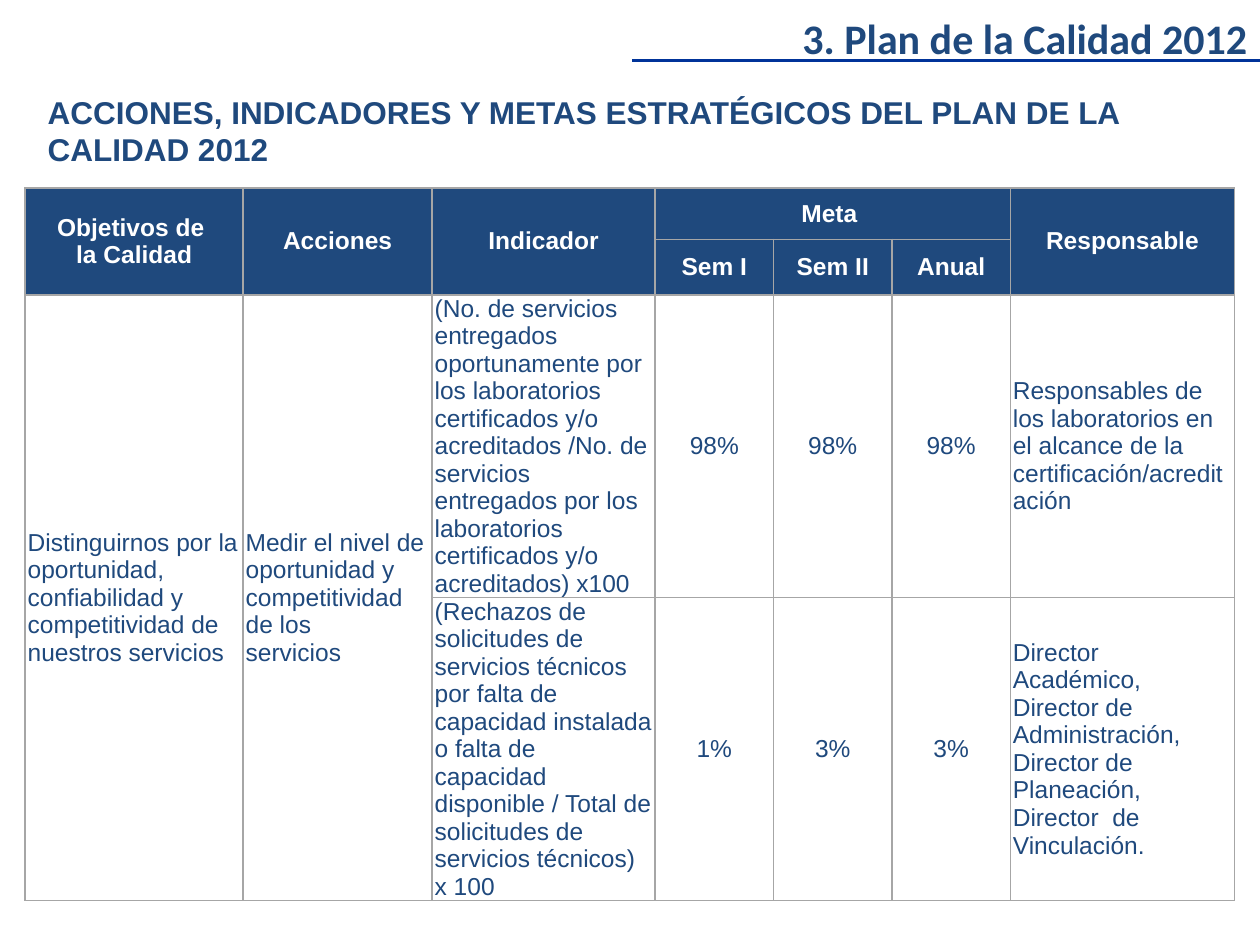
from lxml.etree import SubElement
from pptx import Presentation
from pptx.dml.color import RGBColor
from pptx.enum.shapes import MSO_CONNECTOR
from pptx.enum.text import MSO_ANCHOR, MSO_AUTO_SIZE, PP_ALIGN
from pptx.oxml import parse_xml
from pptx.oxml.ns import nsdecls, qn
from pptx.util import Inches, Pt

NAVY = RGBColor(0x1F, 0x49, 0x7D)
RULE_BLUE = RGBColor(0x00, 0x33, 0x99)
GRAY = RGBColor(0xA6, 0xA6, 0xA6)
WHITE = RGBColor(0xFF, 0xFF, 0xFF)

TITLE = {"name": "Calibri", "size": Pt(24), "bold": True}
HEADING = {"name": "Arial", "size": Pt(18), "bold": True}
HEADER = {"name": "Arial", "size": Pt(14), "bold": True}
BODY = {"name": "Arial", "size": Pt(14), "bold": False}

COL_WIDTHS = (1.73, 1.5, 1.77, 0.94, 0.94, 0.94, 1.78)
ROW_HEIGHTS = (0.41, 0.44, 2.4, 2.4)
HEADER_ROWS = 2
GOAL_COLS = range(3, 6)
MERGES = [((0, c), (1, c)) for c in (0, 1, 2, 6)]
MERGES += [((0, 3), (0, 5)), ((2, 0), (3, 0)), ((2, 1), (3, 1))]

ROWS = (
    ("Objetivos de \nla Calidad", "Acciones", "Indicador", "Meta ", "", "", "Responsable"),
    ("", "", "", "Sem I", "Sem II", "Anual", ""),
    (
        "Distinguirnos por la oportunidad, confiabilidad y competitividad de nuestros servicios",
        "Medir el nivel de\voportunidad y\vcompetitividad de los\vservicios",
        "(No. de servicios entregados oportunamente por los laboratorios certificados y/o "
        "acreditados /No. de servicios entregados por los laboratorios certificados y/o "
        "acreditados) x100",
        "98%", "98%", "98%",
        "Responsables de los laboratorios en el alcance de la certificación/acreditación",
    ),
    (
        "", "",
        "(Rechazos de solicitudes de servicios técnicos por falta de capacidad instalada o "
        "falta de capacidad disponible / Total de solicitudes de servicios técnicos) x 100",
        "1%", "3%", "3%",
        "Director  Académico, Director de Administración, Director de Planeación,\n"
        "Director  de Vinculación.",
    ),
)


def write_text(tf, text, fmt, color, align):
    tf.text = text
    for p in tf.paragraphs:
        p.alignment = align
        for r in p.runs:
            for key, value in fmt.items():
                setattr(r.font, key, value)
            r.font.color.rgb = color


def add_text(slide, box, text, fmt, align, anchor):
    tf = slide.shapes.add_textbox(*map(Inches, box)).text_frame
    tf.word_wrap = True
    tf.auto_size = MSO_AUTO_SIZE.SHAPE_TO_FIT_TEXT
    tf.vertical_anchor = anchor
    write_text(tf, text, fmt, NAVY, align)


def add_rule(slide, start, end):
    line = slide.shapes.add_connector(MSO_CONNECTOR.STRAIGHT, *map(Inches, start + end))
    line.line.color.rgb = RULE_BLUE
    line.line.width = Pt(1.5)
    SubElement(line._element.spPr, qn("a:effectLst"))


def set_borders(cell):
    tc_pr = cell._tc.get_or_add_tcPr()
    for side in ("lnL", "lnR", "lnT", "lnB"):
        tc_pr.append(parse_xml(
            f'<a:{side} {nsdecls("a")} w="{Pt(1)}"><a:solidFill>'
            f'<a:srgbClr val="{GRAY}"/></a:solidFill></a:{side}>'
        ))


def format_cell(cell, text, is_header, centered):
    margins = {"margin_left": 0.02, "margin_right": 0.02, "margin_top": 0, "margin_bottom": 0}
    for key, value in margins.items():
        setattr(cell, key, Inches(value))
    cell.vertical_anchor = MSO_ANCHOR.MIDDLE
    set_borders(cell)
    if is_header:
        cell.fill.solid()
        cell.fill.fore_color.rgb = NAVY
    else:
        cell.fill.background()
    write_text(
        cell.text_frame, text,
        HEADER if is_header else BODY,
        WHITE if is_header else NAVY,
        PP_ALIGN.CENTER if centered else PP_ALIGN.LEFT,
    )


def fill_translucent(cell, percent):
    cell.fill.solid()
    cell.fill.fore_color.rgb = WHITE
    color = cell._tc.tcPr.find(qn("a:solidFill")).find(qn("a:srgbClr"))
    SubElement(color, qn("a:alpha"), val=str(percent * 1000))


def add_plan_table(slide, left, top):
    size = (sum(COL_WIDTHS), sum(ROW_HEIGHTS))
    table = slide.shapes.add_table(
        len(ROWS), len(COL_WIDTHS), *map(Inches, (left, top) + size)
    ).table
    table.first_row = table.horz_banding = False
    for column, width in zip(table.columns, COL_WIDTHS):
        column.width = Inches(width)
    for row, height in zip(table.rows, ROW_HEIGHTS):
        row.height = Inches(height)
    for r, texts in enumerate(ROWS):
        is_header = r < HEADER_ROWS
        for c, text in enumerate(texts):
            format_cell(table.cell(r, c), text, is_header, is_header or c in GOAL_COLS)
    fill_translucent(table.cell(3, 6), 51)
    for first, last in MERGES:
        table.cell(*first).merge(table.cell(*last))


def main():
    prs = Presentation()
    prs.slide_width, prs.slide_height = Inches(10), Inches(7.5)
    slide = prs.slides.add_slide(prs.slide_layouts[6])
    add_rule(slide, (10, 0.48), (5.02, 0.48))
    add_plan_table(slide, 0.2, 1.49)
    add_text(
        slide, (0.28, 0.68, 9.45, 0.71),
        "ACCIONES, INDICADORES Y METAS ESTRATÉGICOS DEL PLAN DE LA CALIDAD 2012",
        HEADING, PP_ALIGN.LEFT, MSO_ANCHOR.MIDDLE,
    )
    add_text(
        slide, (5, 0.05, 5, 0.5), "3. Plan de la Calidad 2012",
        TITLE, PP_ALIGN.RIGHT, MSO_ANCHOR.TOP,
    )
    prs.save("out.pptx")


if __name__ == "__main__":
    main()
